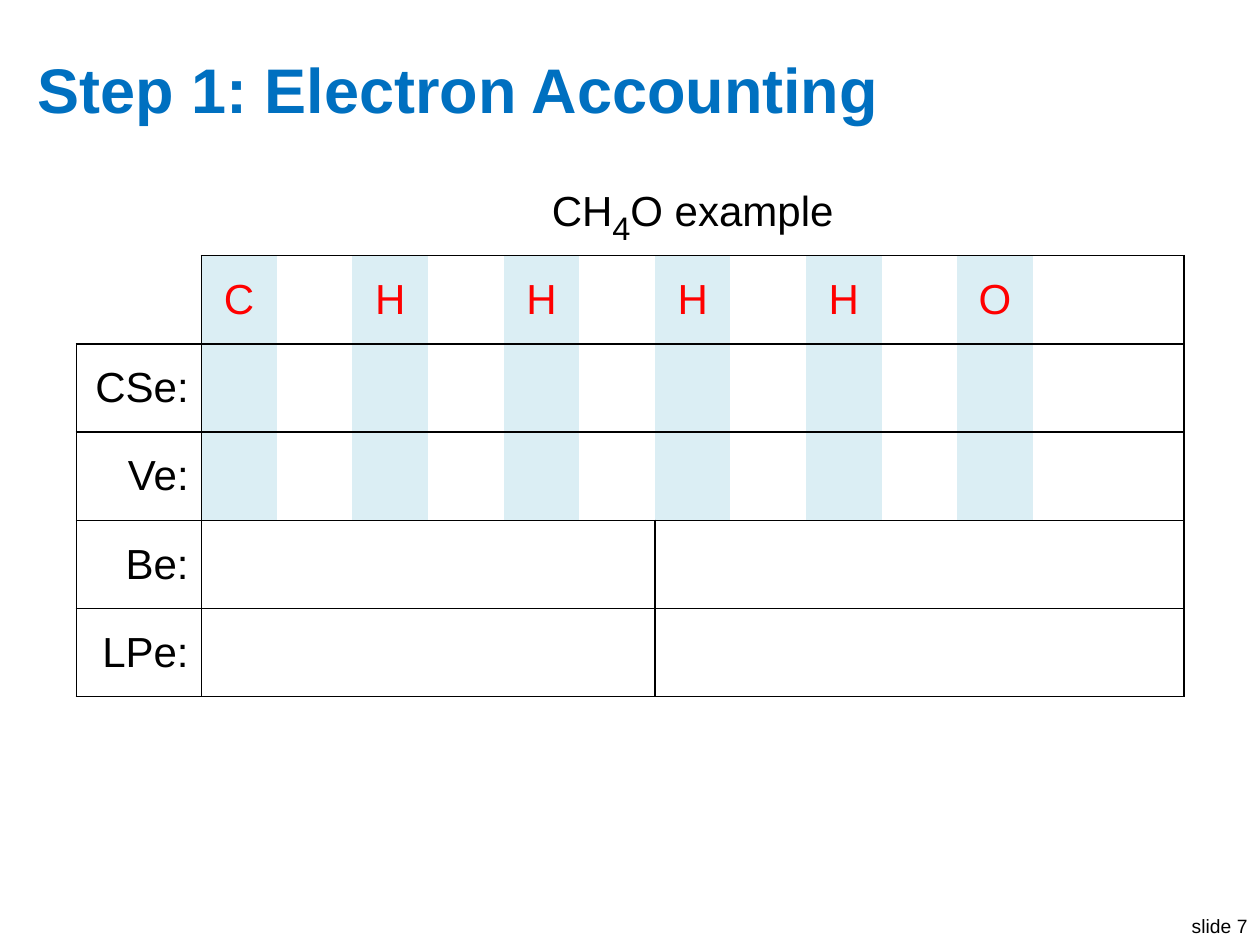
from dataclasses import dataclass

from lxml import etree
from pptx import Presentation
from pptx.dml.color import RGBColor
from pptx.enum.text import MSO_ANCHOR, PP_ALIGN
from pptx.oxml.ns import qn
from pptx.util import Pt

LEFT, CENTER, RIGHT = PP_ALIGN.LEFT, PP_ALIGN.CENTER, PP_ALIGN.RIGHT
TOP, MIDDLE = MSO_ANCHOR.TOP, MSO_ANCHOR.MIDDLE


@dataclass(frozen=True)
class Theme:
    font: str = "Arial"
    title: str = "0070C0"
    text: str = "000000"
    atom: str = "FF0000"
    band: str = "DBEEF4"
    paper: str = "FFFFFF"
    title_size: int = 36
    body_size: int = 24
    subscript_size: int = 32
    footer_size: int = 11


THEME = Theme()
ATOMS = ["C", "H", "H", "H", "H", "O"]
COUNTS = ["CSe:", "Ve:", "Be:", "LPe:"]
ROWS, COLUMNS = 6, 14
FIRST_MERGED_ROW, SPLIT = 4, 7


def style(paragraph, size, color, align, bold=False):
    paragraph.alignment = align
    font = paragraph.font
    font.name, font.size, font.bold = THEME.font, Pt(size), bold
    font.color.rgb = RGBColor.from_string(color)


def add_label(slide, text, box, size, color, align, anchor, bold=False, wrap=True):
    frame = slide.shapes.add_textbox(*map(Pt, box)).text_frame
    frame.word_wrap = wrap
    frame.vertical_anchor = anchor
    frame.text = text
    style(frame.paragraphs[0], size, color, align, bold)


def write_cell(cell, text, color, align):
    cell.text = text
    cell.vertical_anchor = MIDDLE
    style(cell.text_frame.paragraphs[0], THEME.body_size, color, align)


def write_formula(cell):
    write_cell(cell, "CH", THEME.text, CENTER)
    paragraph = cell.text_frame.paragraphs[0]
    subscript = paragraph.add_run()
    subscript.text = "4"
    subscript.font.size = Pt(THEME.subscript_size)
    subscript.font._element.set("baseline", "-25000")
    paragraph.add_run().text = "O example"


def has_vertical_line(row, edge):
    if edge == 0:
        return row >= 2
    if edge == SPLIT:
        return row >= FIRST_MERGED_ROW
    return row >= 1 and edge in (1, COLUMNS)


def has_horizontal_line(edge, column):
    return edge >= 2 or (edge == 1 and column >= 1)


def set_borders(cell, row, column):
    end = column + (cell.span_width if cell.is_merge_origin else 1)
    sides = {
        "a:lnL": has_vertical_line(row, column),
        "a:lnR": has_vertical_line(row, end),
        "a:lnT": has_horizontal_line(row, column),
        "a:lnB": has_horizontal_line(row + 1, column),
    }
    properties = cell._tc.get_or_add_tcPr()
    for position, (side, drawn) in enumerate(sides.items()):
        line = etree.Element(qn(side), w=str(Pt(1)))
        if drawn:
            fill = etree.SubElement(line, qn("a:solidFill"))
            etree.SubElement(fill, qn("a:srgbClr"), val=THEME.text)
        else:
            etree.SubElement(line, qn("a:noFill"))
        properties.insert(position, line)


def format_cell(cell, row, column):
    banded = 1 <= row < FIRST_MERGED_ROW and column % 2 == 1 and column < 2 * len(ATOMS)
    cell.fill.solid()
    cell.fill.fore_color.rgb = RGBColor.from_string(THEME.band if banded else THEME.paper)
    set_borders(cell, row, column)


def add_electron_table(slide):
    label_width, column_width, row_height = 71.3, 43.2, 50.4
    width = label_width + (COLUMNS - 1) * column_width
    table = slide.shapes.add_table(
        ROWS, COLUMNS, Pt(43.7), Pt(95.2), Pt(width), Pt(ROWS * row_height)
    ).table
    table.first_row = table.horz_banding = False
    for index, column in enumerate(table.columns):
        column.width = Pt(column_width if index else label_width)
    for row in table.rows:
        row.height = Pt(row_height)

    table.cell(0, 1).merge(table.cell(0, COLUMNS - 1))
    for row in range(FIRST_MERGED_ROW, ROWS):
        table.cell(row, 1).merge(table.cell(row, SPLIT - 1))
        table.cell(row, SPLIT).merge(table.cell(row, COLUMNS - 1))

    for row in range(ROWS):
        for column in range(COLUMNS):
            format_cell(table.cell(row, column), row, column)

    write_formula(table.cell(0, 1))
    for index, atom in enumerate(ATOMS):
        write_cell(table.cell(1, 2 * index + 1), atom, THEME.atom, CENTER)
    for row, count in enumerate(COUNTS, start=2):
        write_cell(table.cell(row, 0), count, THEME.text, RIGHT)


def main():
    deck = Presentation()
    deck.slide_width, deck.slide_height = Pt(720), Pt(540)
    slide = deck.slides.add_slide(deck.slide_layouts[6])
    add_label(slide, "slide 7", (666, 519.2, 54, 20.8), THEME.footer_size,
              THEME.text, RIGHT, TOP, wrap=False)
    add_label(slide, "Step 1: Electron Accounting", (14.4, 21.6, 691.2, 57.6),
              THEME.title_size, THEME.title, LEFT, MIDDLE, bold=True)
    add_electron_table(slide)
    deck.save("out.pptx")


if __name__ == "__main__":
    main()
